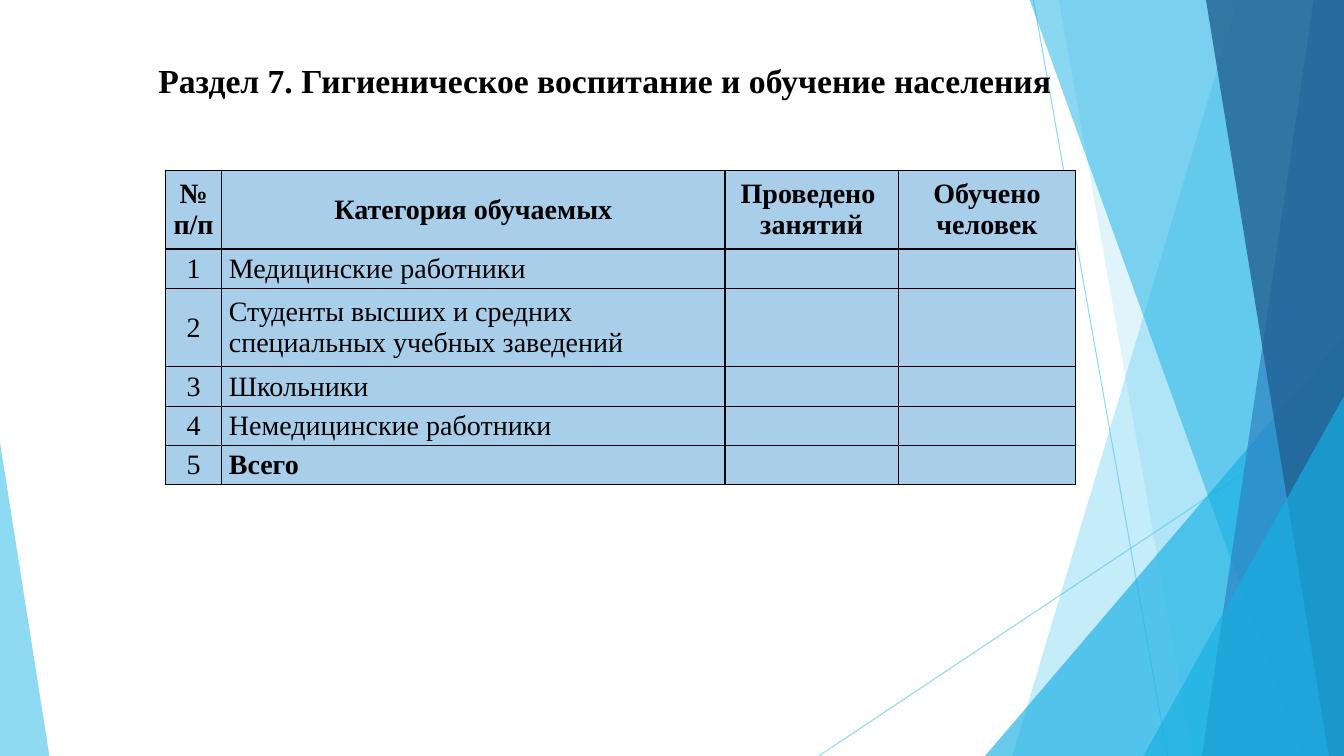
from lxml import etree
from pptx import Presentation
from pptx.dml.color import RGBColor
from pptx.enum.shapes import MSO_CONNECTOR, MSO_SHAPE
from pptx.enum.text import MSO_ANCHOR, MSO_AUTO_SIZE, PP_ALIGN
from pptx.oxml.ns import qn
from pptx.util import Inches, Pt


class Theme:
    font = "Times New Roman"
    text = RGBColor.from_string("000000")
    cell = RGBColor.from_string("A8CEEA")
    sky, cyan, blue, navy = "5FCBEF", "17B0E4", "2E83C3", "226292"
    title_size, table_size = Pt(24), Pt(20)
    thin, border = Pt(0.75), Pt(1)


def paint(fill, color, opacity):
    """Apply a solid colour with opacity in percent."""
    fill.solid()
    fill.fore_color.rgb = RGBColor.from_string(color)
    # the fill's colour element takes the alpha child
    srgb = fill._xPr.find(qn("a:solidFill")).find(qn("a:srgbClr"))
    etree.SubElement(srgb, qn("a:alpha"), val=str(opacity * 1000))


def format_text(tf, size, bold, align):
    for p in tf.paragraphs:
        p.alignment = align
        for r in p.runs:
            r.font.name, r.font.size, r.font.bold = Theme.font, size, bold
            r.font.color.rgb = Theme.text


prs = Presentation()
prs.slide_width, prs.slide_height = Inches(13.33), Inches(7.5)
s = prs.slides.add_slide(prs.slide_layouts[5])

# Thin crossing lines
for x1, y1, x2, y2 in [(10.25, 0, 11.58, 7.5), (13.33, 4.03, 8.12, 7.5)]:
    line = s.shapes.add_connector(
        MSO_CONNECTOR.STRAIGHT, Inches(x1), Inches(y1), Inches(x2), Inches(y2))
    line.line.width = Theme.thin
    paint(line.line.fill, Theme.sky, 70)
    etree.SubElement(line.element.spPr, qn("a:effectLst"))

# Facets from back to front: bands give their top and bottom left x and reach
# the right edge; triangles give left, top, width and apex position
facets = [
    ((12.28, 10.04), Theme.sky, 36),
    ((10.5, 11.83), Theme.sky, 20),
    ((9.77, 3.33, 3.56, 1), Theme.cyan, 66),
    ((10.21, 12.91), Theme.cyan, 50),
    ((13.03, 11.92), Theme.blue, 70),
    ((11.96, 13.18), Theme.navy, 80),
    ((11.34, 3.93, 1.99, 1), Theme.cyan, 66),
    ((0, 4.39, 0.49, 0), Theme.sky, 70),
]
for geometry, color, opacity in facets:
    if len(geometry) == 2:
        top_x, bottom_x = geometry
        outline = s.shapes.build_freeform(Inches(top_x), Inches(-0.01))
        corners = [(13.33, -0.01), (13.33, 7.5), (bottom_x, 7.5)]
        outline.add_line_segments([(Inches(x), Inches(y)) for x, y in corners])
        facet = outline.convert_to_shape()
    else:
        left, top, width, apex = geometry
        facet = s.shapes.add_shape(
            MSO_SHAPE.ISOSCELES_TRIANGLE,
            Inches(left), Inches(top), Inches(width), Inches(7.5 - top))
        facet.adjustments[0] = apex
    facet.shadow.inherit = False
    facet.line.fill.background()
    paint(facet.fill, color, opacity)

# Title, brought in front of the facets
title = s.shapes.title
title.left, title.top = Inches(1.47), Inches(0.54)
title.width, title.height = Inches(9.55), Inches(0.5)
tf = title.text_frame
tf.text = "Раздел 7. Гигиеническое воспитание и обучение населения"
tf.word_wrap = True
tf.auto_size = MSO_AUTO_SIZE.SHAPE_TO_FIT_TEXT
format_text(tf, Theme.title_size, True, PP_ALIGN.LEFT)
title.element.getparent().append(title.element)

# Table
header = ["№\nп/п", "Категория обучаемых", "Проведено \nзанятий", "Обучено человек"]
categories = [
    "Медицинские работники",
    "Студенты высших и средних специальных учебных заведений",
    "Школьники",
    "Немедицинские работники",
    "Всего",
]
rows = [header] + [[str(n), name, "", ""] for n, name in enumerate(categories, 1)]
col_widths = [0.56, 4.99, 1.72, 1.76]
row_heights = [0.78, 0.39, 0.78, 0.39, 0.39, 0.39]

table = s.shapes.add_table(
    len(rows), len(header), Inches(1.64), Inches(1.69),
    Inches(sum(col_widths)), Inches(sum(row_heights))).table
table.first_row = table.horz_banding = False
for col, width in zip(table.columns, col_widths):
    col.width = Inches(width)
for row, height in zip(table.rows, row_heights):
    row.height = Inches(height)

for i, row in enumerate(rows):
    for j, text in enumerate(row):
        cell = table.cell(i, j)
        cell.margin_left = cell.margin_right = Inches(0.07)
        cell.margin_top = cell.margin_bottom = 0
        cell.vertical_anchor = MSO_ANCHOR.MIDDLE
        cell.text_frame.text = text
        bold = i == 0 or text == "Всего"
        align = PP_ALIGN.LEFT if i > 0 and j == 1 else PP_ALIGN.CENTER
        format_text(cell.text_frame, Theme.table_size, bold, align)
        tcPr = cell._tc.get_or_add_tcPr()
        for side in ("a:lnL", "a:lnR", "a:lnT", "a:lnB"):
            ln = etree.SubElement(tcPr, qn(side), w=str(Theme.border))
            fill = etree.SubElement(ln, qn("a:solidFill"))
            etree.SubElement(fill, qn("a:srgbClr"), val=str(Theme.text))
        cell.fill.solid()
        cell.fill.fore_color.rgb = Theme.cell

prs.save("out.pptx")
